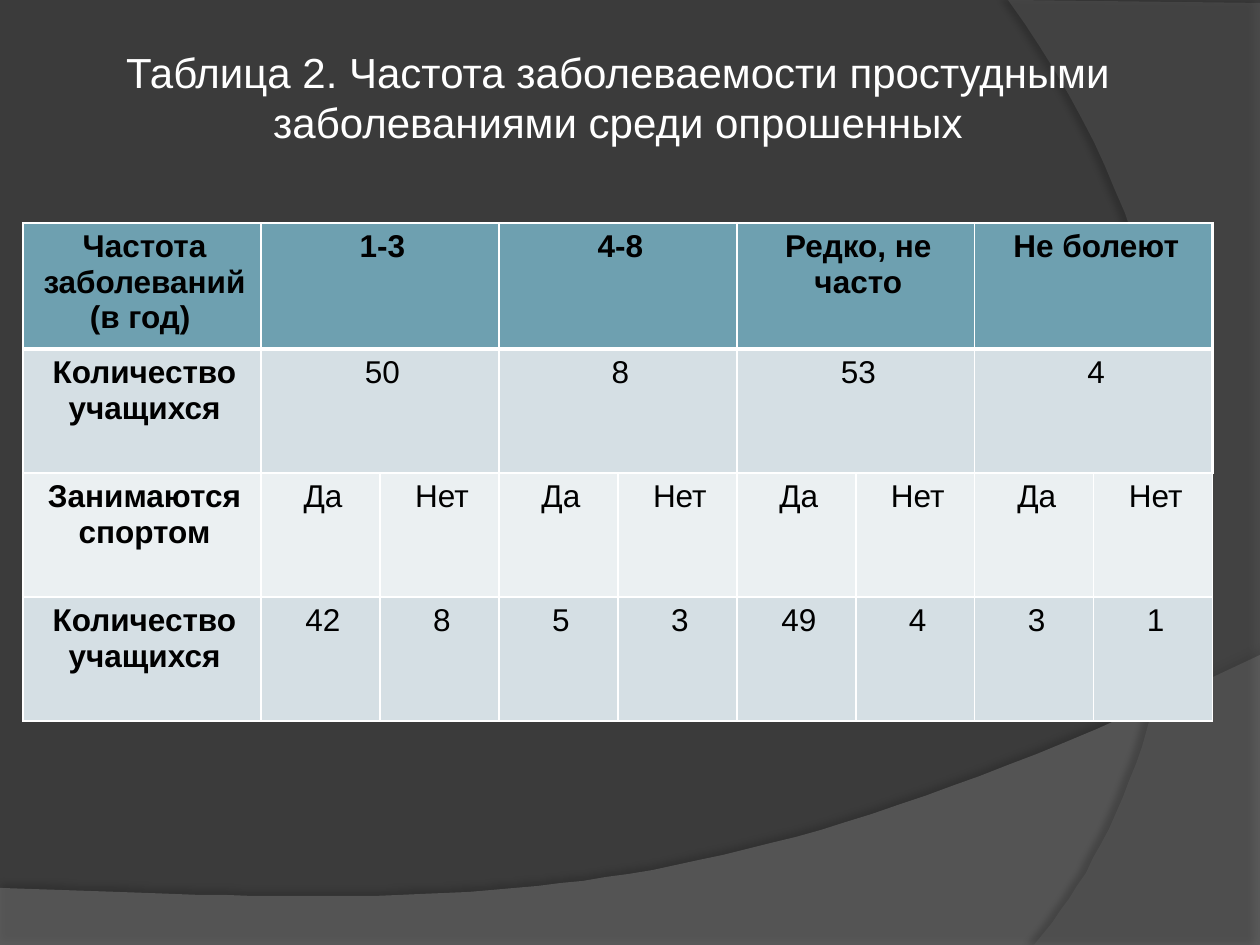
from dataclasses import dataclass

from lxml import etree
from pptx import Presentation
from pptx import util as u
from pptx.dml.color import RGBColor
from pptx.enum import text
from pptx.oxml import ns

# Content: each row is a heading and its values; four values span two columns each
TITLE = "Таблица 2. Частота заболеваемости простудными заболеваниями среди опрошенных"
ROWS = [
    ("Частота заболеваний\n(в год) ", ["1-3", "4-8", "Редко, не часто", "Не болеют"]),
    ("Количество учащихся", ["50", "8", "53", "4"]),
    ("Занимаются спортом", ["Да", "Нет"] * 4),
    ("Количество учащихся", ["42", "8", "5", "3", "49", "4", "3", "1"]),
]


@dataclass(frozen=True)
class Theme:
    font: str = "Arial"
    title_size: int = 24
    cell_size: int = 18
    background: str = "3B3B3B"
    light: str = "FFFFFF"
    dark: str = "000000"
    header: str = "6EA0B0"
    bands: tuple = ("EBF0F2", "D5DFE4")
    lower_wave: str = "7F7F7F"
    side_wave: str = "5E5E5E"


THEME = Theme()

# Layout in px
PX = u.Inches(1) // 126
SLIDE_W, SLIDE_H = 1260, 945
TABLE_X, TABLE_Y = 23, 223
HEADING_W, VALUE_W, VALUE_COLUMNS = 238, 119, 8
ROW_HEIGHTS = [126, 124, 124, 124]
TABLE_W = HEADING_W + VALUE_W * VALUE_COLUMNS
TITLE_Y, TITLE_H = 40, 113
INDENT = 5

# Waves: straight corners, then one Bezier curve as four points
LOWER_CORNERS = [(0, 888), (0, 945), (1260, 945)]
LOWER_CURVE = [(1260, 655), (704, 919), (493, 906), (0, 888)]
SIDE_CORNERS = [(1260, 3), (1260, 945)]
SIDE_CURVE = [(1034, 945), (1178, 780), (1283, 378), (1008, 0)]


def color(code):
    return RGBColor.from_string(code)


def write(frame, content, size, ink, bold=False, indent=0):
    frame.word_wrap = True
    for number, line in enumerate(content.split("\n")):
        paragraph = frame.add_paragraph() if number else frame.paragraphs[0]
        paragraph.alignment = text.PP_ALIGN.CENTER
        if indent:
            properties = paragraph._p.get_or_add_pPr()
            properties.set("marL", str(indent * PX))
            properties.set("indent", "0")
        run = paragraph.add_run()
        run.text = line
        run.font.name = THEME.font
        run.font.size = u.Pt(size)
        run.font.bold = bold
        run.font.color.rgb = color(ink)


def bezier(points, steps=48):
    for step in range(steps + 1):
        t = step / steps
        weights = ((1 - t) ** 3, 3 * t * (1 - t) ** 2, 3 * t * t * (1 - t), t ** 3)
        yield tuple(round(sum(w * p[axis] for w, p in zip(weights, points)), 2)
                    for axis in (0, 1))


def add_wave(slide, corners, curve, fill, opacity, shadow_opacity, distance, direction):
    builder = slide.shapes.build_freeform(*corners[0], scale=PX)
    builder.add_line_segments(corners[1:] + list(bezier(curve)), close=True)
    wave = builder.convert_to_shape()
    wave.fill.solid()
    wave.fill.fore_color.rgb = color(fill)
    wave.line.fill.background()
    wave.shadow.inherit = False
    fill_color = wave._element.spPr.find(".//" + ns.qn("a:srgbClr"))
    etree.SubElement(fill_color, ns.qn("a:alpha"), val=str(opacity * 1000))
    shadow = etree.SubElement(
        wave._element.spPr.find(ns.qn("a:effectLst")), ns.qn("a:outerShdw"),
        blurRad=str(u.Pt(4)), dist=str(u.Pt(distance)),
        dir=str(direction * 60000), rotWithShape="0")
    shade = etree.SubElement(shadow, ns.qn("a:srgbClr"), val=THEME.dark)
    etree.SubElement(shade, ns.qn("a:alpha"), val=str(shadow_opacity * 1000))


def set_borders(cell, **widths):
    properties = cell._tc.get_or_add_tcPr()
    for index, side in enumerate("LRTB"):
        line = etree.Element(ns.qn("a:ln" + side), w=str(u.Pt(widths.get(side, 1))))
        solid = etree.SubElement(line, ns.qn("a:solidFill"))
        etree.SubElement(solid, ns.qn("a:srgbClr"), val=THEME.light)
        properties.insert(index, line)


def add_survey(slide):
    survey = slide.shapes.add_table(
        len(ROWS), VALUE_COLUMNS + 1, TABLE_X * PX, TABLE_Y * PX,
        TABLE_W * PX, sum(ROW_HEIGHTS) * PX).table
    for index, column in enumerate(survey.columns):
        column.width = (VALUE_W if index else HEADING_W) * PX
    for r, (heading, values) in enumerate(ROWS):
        survey.rows[r].height = ROW_HEIGHTS[r] * PX
        span = VALUE_COLUMNS // len(values)
        starts = [0] + list(range(1, VALUE_COLUMNS + 1, span))
        for start, content in zip(starts, [heading] + values):
            if start and span > 1:
                survey.cell(r, start).merge(survey.cell(r, start + span - 1))
            write(survey.cell(r, start).text_frame, content, THEME.cell_size,
                  THEME.dark, bold=r == 0 or start == 0, indent=INDENT)
        for c in range(VALUE_COLUMNS + 1):
            cell = survey.cell(r, c)
            cell.fill.solid()
            cell.fill.fore_color.rgb = color(THEME.bands[r % 2] if r else THEME.header)
            thick_right = span > 1 and c > VALUE_COLUMNS - span
            set_borders(cell, R=2.25 if thick_right else 1,
                        T=3 if r == 1 else 1, B=3 if r == 0 else 1)


def main():
    deck = Presentation()
    deck.slide_width, deck.slide_height = SLIDE_W * PX, SLIDE_H * PX
    slide = deck.slides.add_slide(deck.slide_layouts[6])

    # Background
    slide.background.fill.solid()
    slide.background.fill.fore_color.rgb = color(THEME.background)
    add_wave(slide, LOWER_CORNERS, LOWER_CURVE, THEME.lower_wave, 45, 35, 3.5, 270)
    add_wave(slide, SIDE_CORNERS, SIDE_CURVE, THEME.side_wave, 40, 45, 4, 180)

    # Title
    title = slide.shapes.add_textbox(TABLE_X * PX, TITLE_Y * PX, TABLE_W * PX, TITLE_H * PX)
    title.text_frame.vertical_anchor = text.MSO_ANCHOR.MIDDLE
    write(title.text_frame, TITLE, THEME.title_size, THEME.light)

    # Table
    add_survey(slide)
    deck.save("out.pptx")


if __name__ == "__main__":
    main()
